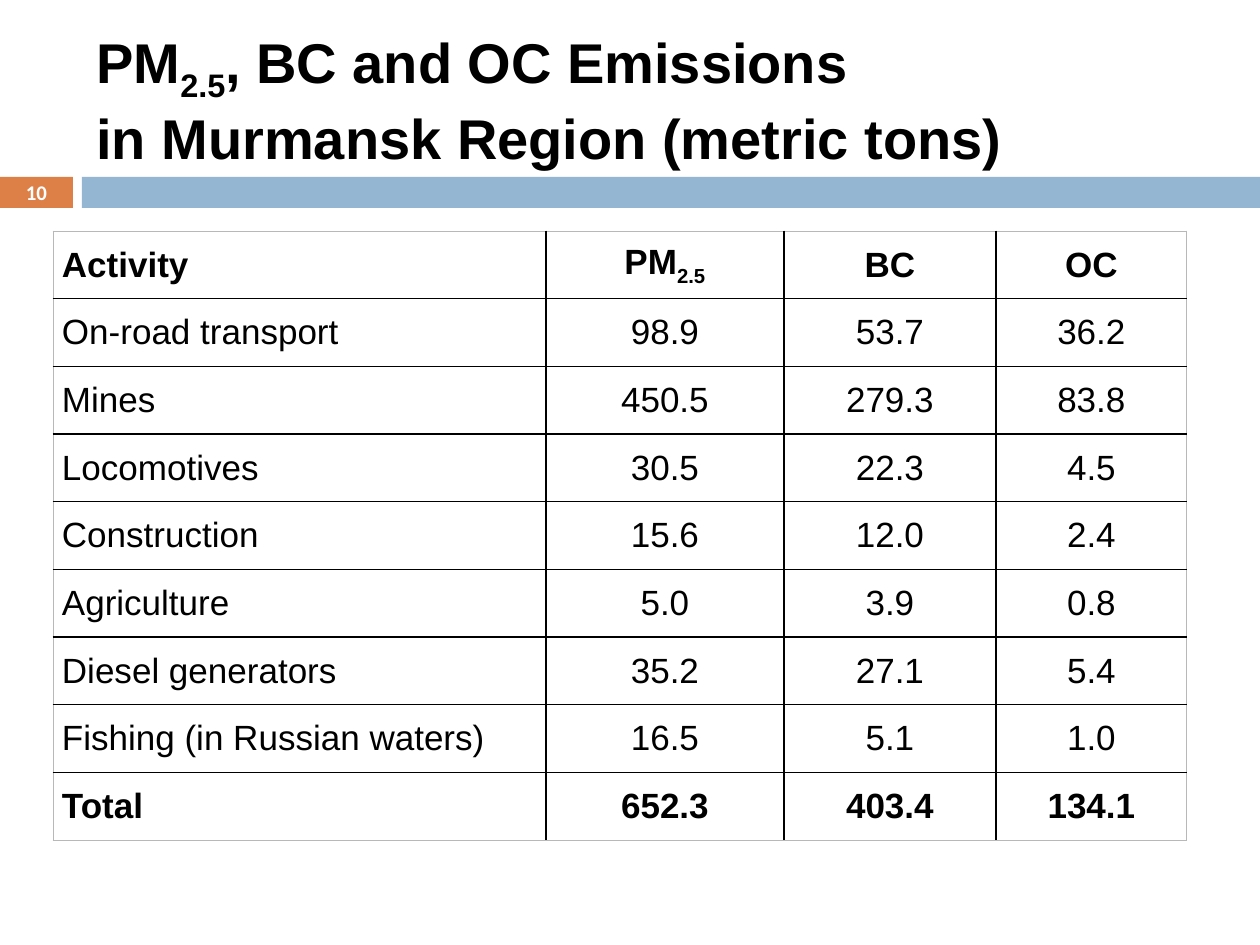
from lxml import etree
from pptx import Presentation
from pptx.dml.color import RGBColor
from pptx.enum.shapes import MSO_SHAPE
from pptx.enum.text import MSO_ANCHOR, PP_ALIGN
from pptx.oxml.ns import qn
from pptx.util import Pt

RECTANGLE = MSO_SHAPE.RECTANGLE
MIDDLE = MSO_ANCHOR.MIDDLE
LEFT, CENTER = PP_ALIGN.LEFT, PP_ALIGN.CENTER
SCALE = 914400 / 126
COLORS = {"orange": "DD8047", "blue": "94B6D2", "black": "000000",
          "white": "FFFFFF", "edge": "B8B8B8"}


def px(*lengths):
    return [round(length * SCALE) for length in lengths]


def add_span(para, text, size, bold=True, font="Arial", color="black", subscript=False):
    span = para.add_run()
    span.text = text
    span.font.size = Pt(size)
    span.font.bold = bold
    span.font.name = font
    span.font.color.rgb = RGBColor.from_string(COLORS[color])
    if subscript:
        span.font._element.set("baseline", "-25000")


deck = Presentation()
deck.slide_width, deck.slide_height = px(1260, 945)
page = deck.slides.add_slide(deck.slide_layouts[6])

for left, width, color in [(0, 73, "orange"), (82, 1178, "blue")]:
    band = page.shapes.add_shape(RECTANGLE, *px(left, 177, width, 31))
    band.shadow.inherit = False
    band.fill.solid()
    band.fill.fore_color.rgb = RGBColor.from_string(COLORS[color])
    band.line.fill.background()

title_box = page.shapes.add_textbox(*px(84, 31, 1124, 136))
title_box.text_frame.word_wrap = True
title_box.text_frame.vertical_anchor = MIDDLE
para = title_box.text_frame.paragraphs[0]
add_span(para, "PM", 32)
add_span(para, "2.5", 32, subscript=True)
add_span(para, ", BC and OC Emissions", 32)
para.add_line_break()
add_span(para, "in Murmansk Region (metric tons)", 32)

number_box = page.shapes.add_textbox(*px(0, 175, 73, 34))
number_frame = number_box.text_frame
number_frame.word_wrap = True
number_frame.vertical_anchor = MIDDLE
number_frame.margin_top = number_frame.margin_bottom = 0
para = number_frame.paragraphs[0]
para.alignment = CENTER
add_span(para, "10", 11.9, font="Calibri", color="white")

rows = [
    ("Activity", "PM2.5", "BC", "OC"),
    ("On-road transport", "98.9", "53.7", "36.2"),
    ("Mines", "450.5", "279.3", "83.8"),
    ("Locomotives", "30.5", "22.3", "4.5"),
    ("Construction", "15.6", "12.0", "2.4"),
    ("Agriculture", "5.0", "3.9", "0.8"),
    ("Diesel generators", "35.2", "27.1", "5.4"),
    ("Fishing (in Russian waters)", "16.5", "5.1", "1.0"),
    ("Total", "652.3", "403.4", "134.1"),
]
widths = [493, 238, 212, 191]
last_row, last_column = len(rows) - 1, len(widths) - 1
table = page.shapes.add_table(len(rows), len(widths), *px(53, 231, sum(widths), 609)).table
for column, width in zip(table.columns, px(*widths)):
    column.width = width

for r, values in enumerate(rows):
    for c, value in enumerate(values):
        cell = table.cell(r, c)
        cell.fill.background()
        cell.vertical_anchor = MIDDLE
        cell.margin_left, cell.margin_right, cell.margin_top, cell.margin_bottom = px(9, 9, 0, 0)
        para = cell.text_frame.paragraphs[0]
        para.alignment = CENTER if c else LEFT
        bold = r in (0, last_row)
        if value == "PM2.5":
            add_span(para, "PM", 20)
            add_span(para, "2.5", 20, subscript=True)
        else:
            add_span(para, value, 20, bold)

        outer_sides = [("a:lnL", c == 0), ("a:lnR", c == last_column),
                       ("a:lnT", r == 0), ("a:lnB", r == last_row)]
        properties = cell._tc.get_or_add_tcPr()
        for index, (side, is_outer) in enumerate(outer_sides):
            border = etree.Element(qn(side), w=str(Pt(0.5 if is_outer else 1)))
            fill = etree.SubElement(border, qn("a:solidFill"))
            etree.SubElement(fill, qn("a:srgbClr"), val=COLORS["edge" if is_outer else "black"])
            properties.insert(index, border)

deck.save("out.pptx")
